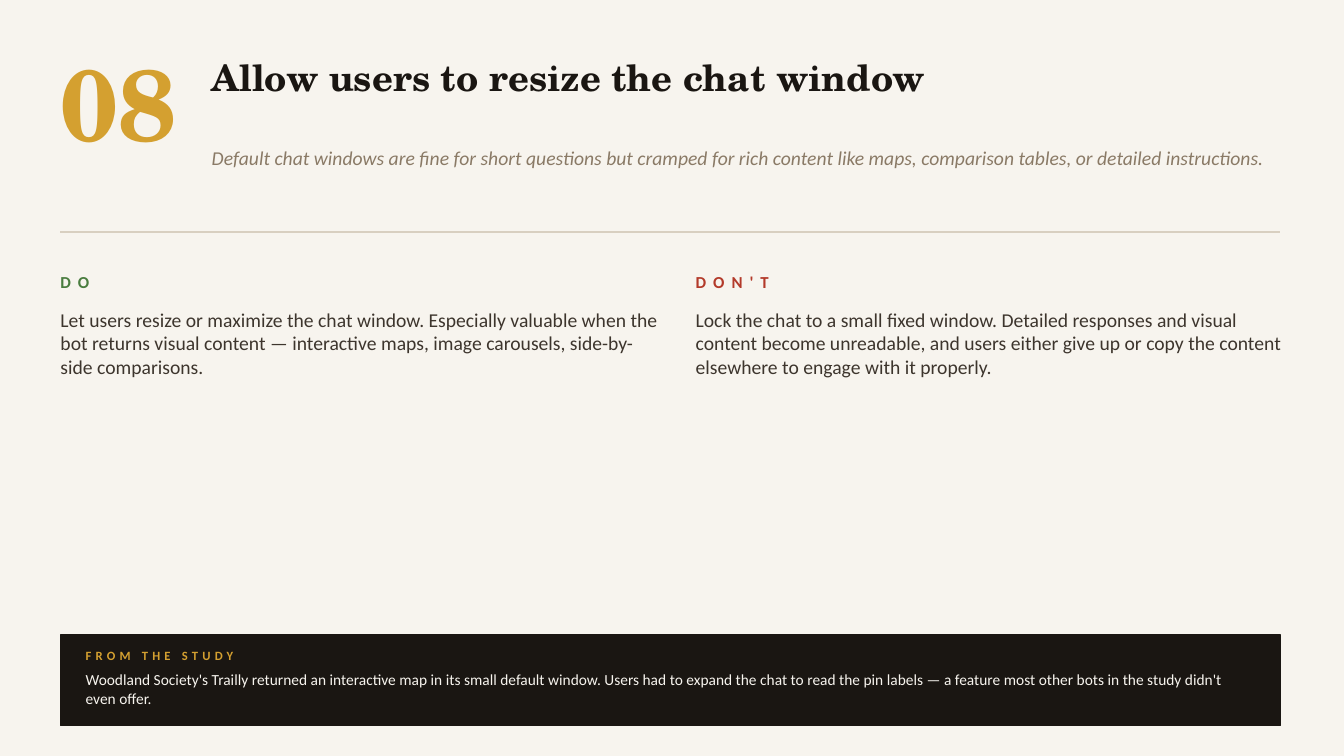
from typing import NamedTuple

from lxml import etree
from pptx import Presentation
from pptx import util as u
from pptx.dml.color import RGBColor
from pptx.enum import shapes, text
from pptx.oxml.ns import qn

CELL = 0.1  # inches per grid column and row
LEFT, CONTENT_WIDTH = 6, 121
HEADING_LEFT, HEADING_WIDTH = 21, 106
STUDY_LEFT = 8.5
ADVICE_WIDTH, ADVICE_STEP = 60, 63

SERIF, SANS = "TeX Gyre Schola", "Calibri"
PAPER, INK, GOLD = "F7F4EE", "1A1612", "D4A030"
MUTED, BODY, RULE = "8A7A66", "3D352D", "D8CFC0"
GREEN, RED = "4A7D3F", "B33A2A"


class Area(NamedTuple):
    """A rectangle in grid cells."""
    left: float
    top: float
    width: float
    height: float


class Advice(NamedTuple):
    label: str
    color: str
    body: str


ADVICE = [
    Advice("DO", GREEN,
           "Let users resize or maximize the chat window. Especially valuable when the bot "
           "returns visual content — interactive maps, image carousels, side-by-side "
           "comparisons."),
    Advice("DON'T", RED,
           "Lock the chat to a small fixed window. Detailed responses and visual content "
           "become unreadable, and users either give up or copy the content elsewhere to "
           "engage with it properly."),
]


def cells(count: float) -> u.Length:
    return u.Inches(count * CELL)


def rgb(value: str) -> RGBColor:
    return RGBColor.from_string(value)


def write(shape, words: str, *, size: float, color: str, font: str = SANS,
          bold: bool = False, italic: bool = False, tracking: float = 0,
          middle: bool = False, after: float = 0) -> None:
    """Fill a shape with one left-aligned paragraph; tracking and after are points."""
    frame = shape.text_frame
    frame.word_wrap = True
    frame.auto_size = text.MSO_AUTO_SIZE.NONE
    frame.margin_left = frame.margin_top = frame.margin_right = frame.margin_bottom = 0
    frame.vertical_anchor = text.MSO_ANCHOR.MIDDLE if middle else text.MSO_ANCHOR.TOP
    paragraph = frame.paragraphs[0]
    paragraph.alignment = text.PP_ALIGN.LEFT
    if after:
        paragraph.space_after = u.Pt(after)
    run = paragraph.add_run()
    run.text = words
    run.font.name, run.font.size = font, u.Pt(size)
    run.font.bold, run.font.italic = bold, italic
    run.font.color.rgb = rgb(color)
    if tracking:
        run.font._element.set("spc", str(int(tracking * 100)))


def add_text(slide, area: Area, words: str, **style) -> None:
    write(slide.shapes.add_textbox(*map(cells, area)), words, **style)


def add_heading(slide) -> None:
    title = slide.shapes.title
    title.left, title.top, title.width, title.height = map(
        cells, Area(HEADING_LEFT, 5.5, HEADING_WIDTH, 11))
    write(title, "Allow users to resize the chat window",
          size=26, color=INK, font=SERIF, bold=True)
    add_text(slide, Area(LEFT, 4, 15, 12), "08",
             size=72, color=GOLD, font=SERIF, bold=True)
    add_text(slide, Area(HEADING_LEFT, 14.5, HEADING_WIDTH, 6),
             "Default chat windows are fine for short questions but cramped for rich "
             "content like maps, comparison tables, or detailed instructions.",
             size=14, color=MUTED, italic=True)


def add_rule(slide, row: float) -> None:
    rule = slide.shapes.add_connector(
        shapes.MSO_CONNECTOR.STRAIGHT, cells(LEFT), cells(row),
        cells(LEFT + CONTENT_WIDTH), cells(row))
    rule.line.color.rgb = rgb(RULE)
    rule.line.width = u.Pt(1)
    etree.SubElement(rule._element.spPr, qn("a:effectLst"))


def add_advice(slide, left: float, advice: Advice) -> None:
    add_text(slide, Area(left, 26, ADVICE_WIDTH, 4), advice.label,
             size=12, color=advice.color, bold=True, tracking=5, middle=True)
    add_text(slide, Area(left, 30.5, ADVICE_WIDTH, 31), advice.body,
             size=14, color=BODY, after=8)


def add_study(slide) -> None:
    panel = slide.shapes.add_shape(
        shapes.MSO_SHAPE.RECTANGLE, *map(cells, Area(LEFT, 63, CONTENT_WIDTH, 9)))
    panel.shadow.inherit = False
    panel.fill.solid()
    panel.fill.fore_color.rgb = rgb(INK)
    panel.line.color.rgb = rgb(INK)
    panel.line.width = u.Pt(1)
    add_text(slide, Area(STUDY_LEFT, 63.8, 25, 2.5), "FROM THE STUDY",
             size=9, color=GOLD, bold=True, tracking=3, middle=True)
    add_text(slide, Area(STUDY_LEFT, 66.5, 116, 5),
             "Woodland Society's Trailly returned an interactive map in its small default "
             "window. Users had to expand the chat to read the pin labels — a feature most "
             "other bots in the study didn't even offer.",
             size=11, color=PAPER)


def main() -> None:
    deck = Presentation()
    deck.slide_width, deck.slide_height = u.Inches(13.33), u.Inches(7.5)
    slide = deck.slides.add_slide(deck.slide_layouts.get_by_name("Title Only"))
    slide.background.fill.solid()
    slide.background.fill.fore_color.rgb = rgb(PAPER)
    add_heading(slide)
    add_rule(slide, 23)
    for index, advice in enumerate(ADVICE):
        add_advice(slide, LEFT + index * ADVICE_STEP, advice)
    add_study(slide)
    deck.save("out.pptx")


if __name__ == "__main__":
    main()
